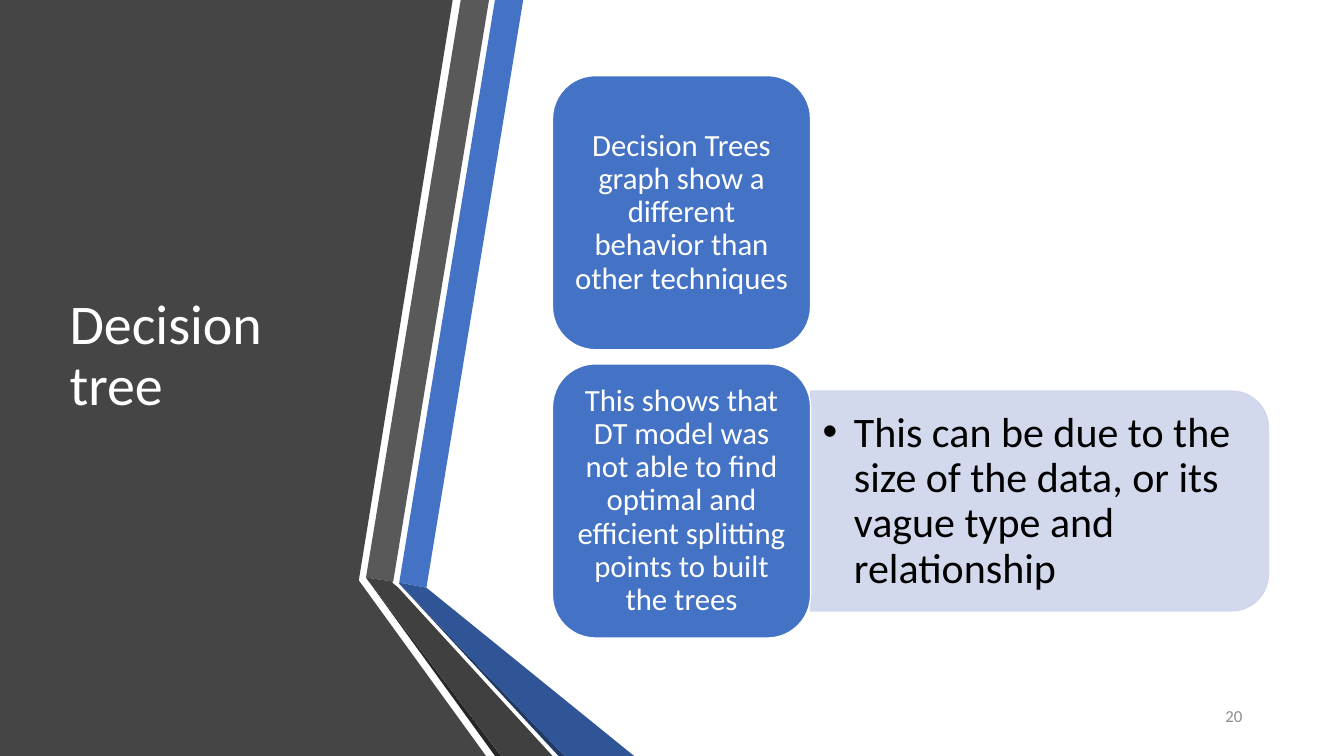
from pptx import Presentation
from pptx.dml.color import RGBColor
from pptx.enum.shapes import MSO_SHAPE as Preset
from pptx.enum.text import MSO_ANCHOR as Anchor, MSO_AUTO_SIZE as AutoSize, PP_ALIGN as Align
from pptx.oxml.ns import qn
from pptx.util import Inches, Pt
from lxml.etree import SubElement

UNIT = Inches(0.01)  # every length is a count of these grid units
WIDTH, HEIGHT = 1333, 750
TITLE_ONLY = 5
FONT = "Calibri"
BLUE, PALE, WHITE, BLACK = "4472C4", "CFD5EA", "FFFFFF", "000000"

PANEL = ("454545", [(0, 0), (449, 0), (356, 575), (356, 576), (482, HEIGHT), (0, HEIGHT)])
RIBBONS = [
    (BLUE, [(396, 578), (423, 583), (519, 0), (491, 0)]),
    ("595959", [(485, 0), (457, 0), (363, 573), (390, 577)]),
    ("262626", [(363, 573), (491, HEIGHT), (497, HEIGHT)]),
    ("203864", [(396, 579), (554, HEIGHT), (560, HEIGHT)]),
    ("2F5597", [(396, 579), (560, HEIGHT), (629, HEIGHT), (423, 583), (396, 578)]),
    ("404040", [(548, HEIGHT), (395, 583), (389, 578), (390, 577), (363, 573), (497, HEIGHT)]),
]

CARD_LEFT, CARD_TOP, CARD_WIDTH, CARD_HEIGHT, CARD_GAP = 548, 75, 256, 272, 14
CARDS = [
    "Decision Trees graph show a different behavior than other techniques",
    "This shows that DT model was not able to find optimal and efficient "
    "splitting points to built the trees",
]
DETAIL = "This can be due to the size of the data, or its vague type and relationship"
DETAIL_WIDTH, DETAIL_HEIGHT = 454, 218


def color(hex_code):
    return RGBColor.from_string(hex_code)


def box(left, top, width, height):
    return [round(length * UNIT) for length in (left, top, width, height)]


def paint(shape, fill, line=None):
    shape.shadow.inherit = False
    shape.fill.solid()
    shape.fill.fore_color.rgb = color(fill)
    if line:
        shape.line.color.rgb = color(line)
        shape.line.width = Pt(1)
    else:
        shape.line.fill.background()


def set_opacity(shape, percent):
    """Make both the fill and the outline of the shape partly see-through."""
    for tint in shape.element.spPr.iter(qn("a:srgbClr")):
        SubElement(tint, qn("a:alpha"), val=str(percent * 1000))


def write(shape, text, size, font_color, align=Align.LEFT, spacing=0.9, inset=(10, 5), bullet_indent=None):
    frame = shape.text_frame
    frame.word_wrap = True
    frame.auto_size = AutoSize.NONE
    frame.vertical_anchor = Anchor.MIDDLE
    frame.margin_left = frame.margin_right = inset[0] * UNIT
    frame.margin_top = frame.margin_bottom = inset[1] * UNIT
    paragraph = frame.paragraphs[0]
    paragraph.alignment = align
    paragraph.line_spacing = spacing
    run = paragraph.add_run()
    run.text = text
    run.font.size = Pt(size)
    run.font.name = FONT
    run.font.color.rgb = color(font_color)
    if bullet_indent:
        properties = paragraph._p.get_or_add_pPr()
        properties.set("marL", str(bullet_indent * UNIT))
        properties.set("indent", str(-bullet_indent * UNIT))
        SubElement(properties, qn("a:buFont"), typeface="Arial")
        SubElement(properties, qn("a:buChar"), char="•")


def add_polygon(slide, fill, points):
    builder = slide.shapes.build_freeform(*points[0], scale=UNIT)
    builder.add_line_segments(points[1:], close=True)
    polygon = builder.convert_to_shape()
    paint(polygon, fill)
    return polygon


def add_text(slide, position, text, **text_format):
    write(slide.shapes.add_textbox(*box(*position)), text, **text_format)


def add_card(slide, top, text):
    card = slide.shapes.add_shape(Preset.ROUNDED_RECTANGLE, *box(CARD_LEFT, top, CARD_WIDTH, CARD_HEIGHT))
    paint(card, BLUE, WHITE)
    write(card, text, size=22, font_color=WHITE, align=Align.CENTER, inset=(9, 5))


def add_detail(slide, card_top, text):
    """Add a panel, rounded on its right side, centred beside a card."""
    left = CARD_LEFT + CARD_WIDTH
    middle = card_top + CARD_HEIGHT / 2
    # The preset is rounded at its top, so it is laid upright and then turned.
    panel = slide.shapes.add_shape(
        Preset.ROUND_2_SAME_RECTANGLE,
        *box(left + (DETAIL_WIDTH - DETAIL_HEIGHT) / 2, middle - DETAIL_WIDTH / 2, DETAIL_HEIGHT, DETAIL_WIDTH))
    panel.rotation = 90
    paint(panel, PALE, PALE)
    set_opacity(panel, 90)
    add_text(slide, (left, middle - 98, 444, 197), text,
             size=30, font_color=BLACK, inset=(12, 6), bullet_indent=31)


def main():
    presentation = Presentation()
    presentation.slide_width, presentation.slide_height = WIDTH * UNIT, HEIGHT * UNIT
    slide = presentation.slides.add_slide(presentation.slide_layouts[TITLE_ONLY])

    title = slide.shapes.title
    title.left, title.top, title.width, title.height = box(59, 75, 304, 558)
    write(title, "Decision tree", size=40, font_color=WHITE)
    panel = add_polygon(slide, *PANEL)
    panel.element.addnext(title.element)
    for fill, points in RIBBONS:
        add_polygon(slide, fill, points)

    card_tops = [CARD_TOP + row * (CARD_HEIGHT + CARD_GAP) for row in range(len(CARDS))]
    add_detail(slide, card_tops[-1], DETAIL)
    for top, text in zip(card_tops, CARDS):
        add_card(slide, top, text)
    add_text(slide, (1123, 690, 119, 40), "20", size=12, font_color="8C8C8C", align=Align.RIGHT, spacing=1)

    presentation.save("out.pptx")


if __name__ == "__main__":
    main()
